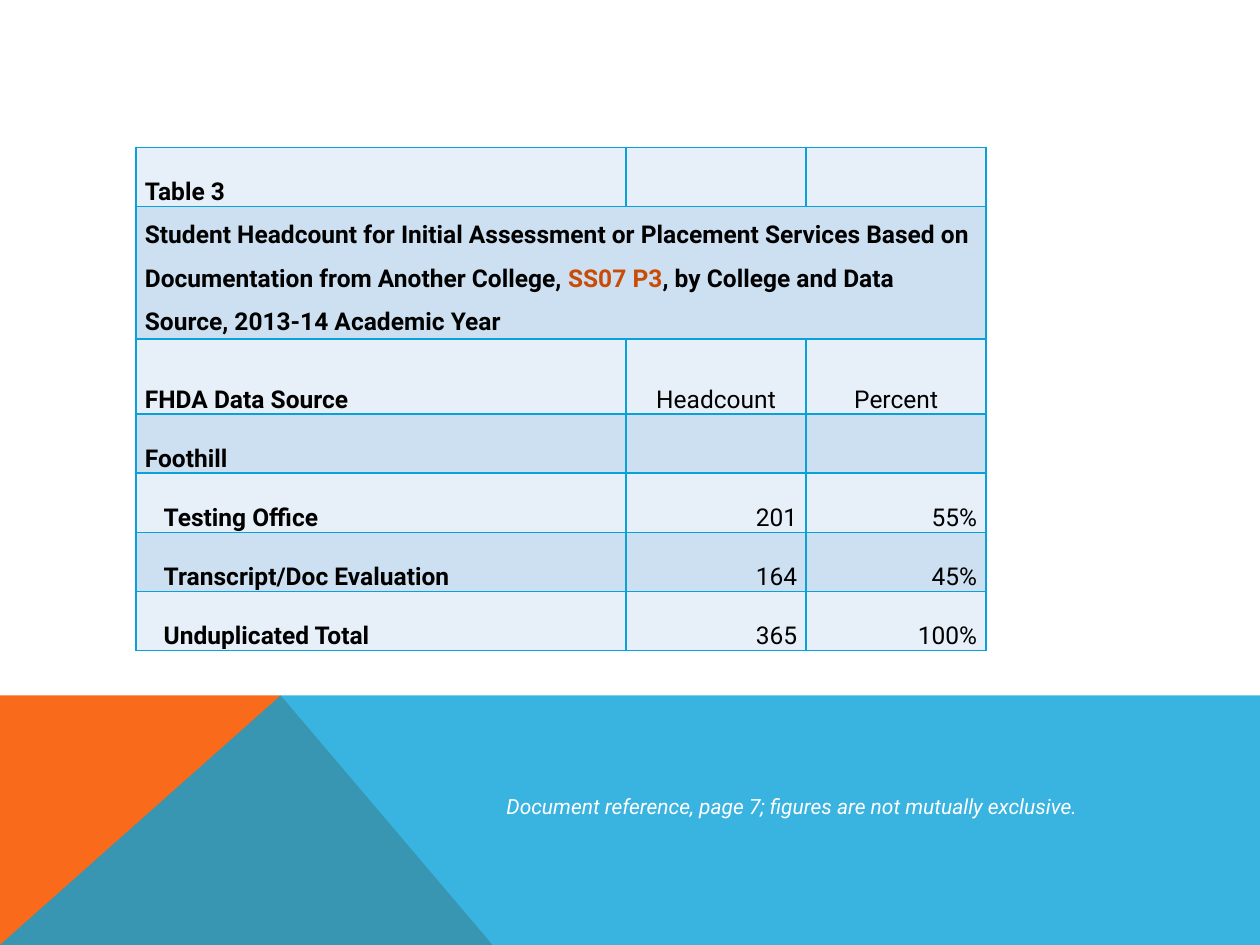
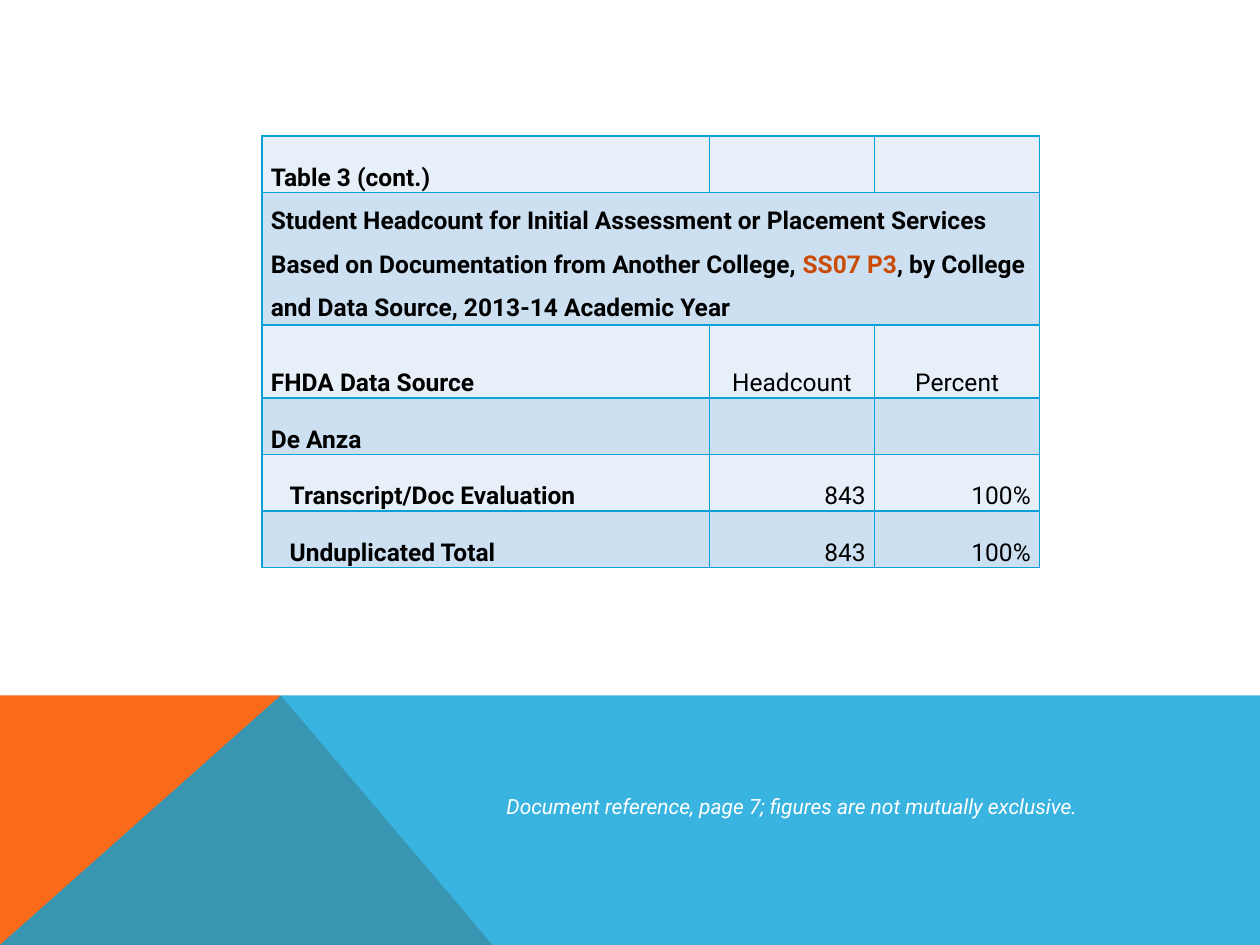
from lxml import etree
from pptx import Presentation
from pptx import util as u
from pptx.dml import color
from pptx.enum import text
from pptx.oxml import ns

COLORS = {
    "orange": "F96A1B",
    "blue": "08A1D9",
    "code": "CA4B05",
    "light_row": "E7F0F8",
    "dark_row": "CCE0F1",
    "ink": "000000",
    "white": "FFFFFF",
}
FONT = "Roboto"
SLIDE_W, SLIDE_H = u.Cm(25.4), u.Cm(19.05)
BAND_TOP = u.Cm(14.02)
BAND_BOX = (0, BAND_TOP, SLIDE_W, SLIDE_H - BAND_TOP)
NOTE = "Document reference, page 7; figures are not mutually exclusive."

# Each caption part is (wording, colour)
CAPTION = [
    ("Student Headcount for Initial Assessment or Placement Services "
     "Based on Documentation from Another College, ", "ink"),
    ("SS07 P3", "code"),
    (", by College and Data Source, 2013-14 Academic Year", "ink"),
]
CAPTION_ROW, HEADING_ROW, COLLEGE_ROW = 1, 2, 3

# Lengths are centimetres
TABLES = [
    {
        "corner": (2.74, 2.97), "columns": (9.88, 3.63, 3.63),
        "row": 1.19, "heading_row": 1.52,
        "label": "Table 3", "college": "Foothill",
        "counts": [("Testing Office", "201", "55%"),
                   ("Transcript/Doc Evaluation", "164", "45%"),
                   ("Unduplicated Total", "365", "100%")],
    },
    {
        "corner": (5.28, 2.74), "columns": (9.02, 3.33, 3.33),
        "row": 1.14, "heading_row": 1.47,
        "label": "Table 3 (cont.)", "college": "De Anza",
        "counts": [("Transcript/Doc Evaluation", "843", "100%"),
                   ("Unduplicated Total", "843", "100%")],
    },
]


def rgb(name):
    return color.RGBColor.from_string(COLORS[name])


def style_run(run, size, color_name, bold=False, italic=False):
    font = run.font
    font.name, font.size = FONT, u.Pt(size)
    font.bold, font.italic = bold, italic
    font.color.rgb = rgb(color_name)


def add_panel(slide, corners, color_name, opacity=100):
    builder = slide.shapes.build_freeform(*corners[0])
    builder.add_line_segments(corners[1:], close=True)
    panel = builder.convert_to_shape()
    panel.shadow.inherit = False
    panel.line.fill.background()
    panel.fill.solid()
    panel.fill.fore_color.rgb = rgb(color_name)
    if opacity < 100:
        tint = panel.fill._xPr.find(".//" + ns.qn("a:srgbClr"))
        etree.SubElement(tint, ns.qn("a:alpha"), val=str(opacity * 1000))


def add_band(slide, box):
    """Orange panel under a translucent blue one, meeting at a peak."""
    left, top, width, height = box
    right, bottom = left + width, top + height
    peak = (left + u.Cm(5.66), top)
    add_panel(slide, [(left, bottom), (left, top), peak,
                      (left + u.Cm(9.93), bottom)], "orange")
    add_panel(slide, [(left, bottom), peak, (right, top), (right, bottom)],
              "blue", opacity=80)


def add_note(slide, box):
    """Reference line inside the band."""
    left, top = box[:2]
    note = slide.shapes.add_textbox(left + u.Cm(9.96), top + u.Cm(1.86),
                                    u.Cm(13.49), u.Cm(0.76))
    note.text_frame.word_wrap = True
    note.text_frame.text = NOTE
    style_run(note.text_frame.paragraphs[0].runs[0], 12, "white", italic=True)


def add_borders(cell):
    properties = cell._tc.get_or_add_tcPr()
    for side in ("lnL", "lnR", "lnT", "lnB"):
        border = etree.SubElement(properties, ns.qn("a:" + side),
                                  w=str(u.Pt(1)))
        fill = etree.SubElement(border, ns.qn("a:solidFill"))
        etree.SubElement(fill, ns.qn("a:srgbClr"), val=COLORS["blue"])


def format_cell(cell, row, column):
    add_borders(cell)
    cell.fill.solid()
    cell.fill.fore_color.rgb = rgb("dark_row" if row % 2 else "light_row")
    cell.margin_left = cell.margin_right = u.Cm(0.18)
    cell.margin_top = cell.margin_bottom = 0
    if row != CAPTION_ROW:
        cell.vertical_anchor = text.MSO_ANCHOR.BOTTOM
    if row > COLLEGE_ROW and column == 0:
        cell.margin_left = u.Cm(0.56)

    paragraph = cell.text_frame.paragraphs[0]
    paragraph.line_spacing = 1.5
    if column:
        paragraph.alignment = (text.PP_ALIGN.CENTER if row == HEADING_ROW
                               else text.PP_ALIGN.RIGHT)
    for run in paragraph.runs:
        style_run(run, 14, "ink", bold=column == 0)


def add_headcount_table(slide, content):
    rows = [
        (content["label"], "", ""),
        ("", "", ""),
        ("FHDA Data Source", "Headcount", "Percent"),
        (content["college"], "", ""),
        *content["counts"],
    ]
    heights = [content["row"]] * len(rows)
    heights[CAPTION_ROW] = 2.67
    heights[HEADING_ROW] = content["heading_row"]
    left, top = content["corner"]
    widths = content["columns"]
    headcounts = slide.shapes.add_table(
        len(rows), len(widths), u.Cm(left), u.Cm(top),
        u.Cm(sum(widths)), u.Cm(sum(heights))).table
    headcounts.first_row = headcounts.horz_banding = False
    for column, width in zip(headcounts.columns, widths):
        column.width = u.Cm(width)
    for row, height in zip(headcounts.rows, heights):
        row.height = u.Cm(height)

    for r, entries in enumerate(rows):
        for c, entry in enumerate(entries):
            cell = headcounts.cell(r, c)
            if entry:
                cell.text_frame.text = entry
            format_cell(cell, r, c)

    # Caption across all columns
    caption = headcounts.cell(CAPTION_ROW, 0)
    caption.merge(headcounts.cell(CAPTION_ROW, len(widths) - 1))
    for wording, color_name in CAPTION:
        run = caption.text_frame.paragraphs[0].add_run()
        run.text = wording
        style_run(run, 14, color_name, bold=True)


def add_table_slide(deck, content):
    slide = deck.slides.add_slide(deck.slide_layouts.get_by_name("Blank"))
    add_band(slide, BAND_BOX)
    add_headcount_table(slide, content)
    add_note(slide, BAND_BOX)


def main():
    deck = Presentation()
    deck.slide_width, deck.slide_height = SLIDE_W, SLIDE_H
    for content in TABLES:
        add_table_slide(deck, content)
    deck.save("out.pptx")


if __name__ == "__main__":
    main()
